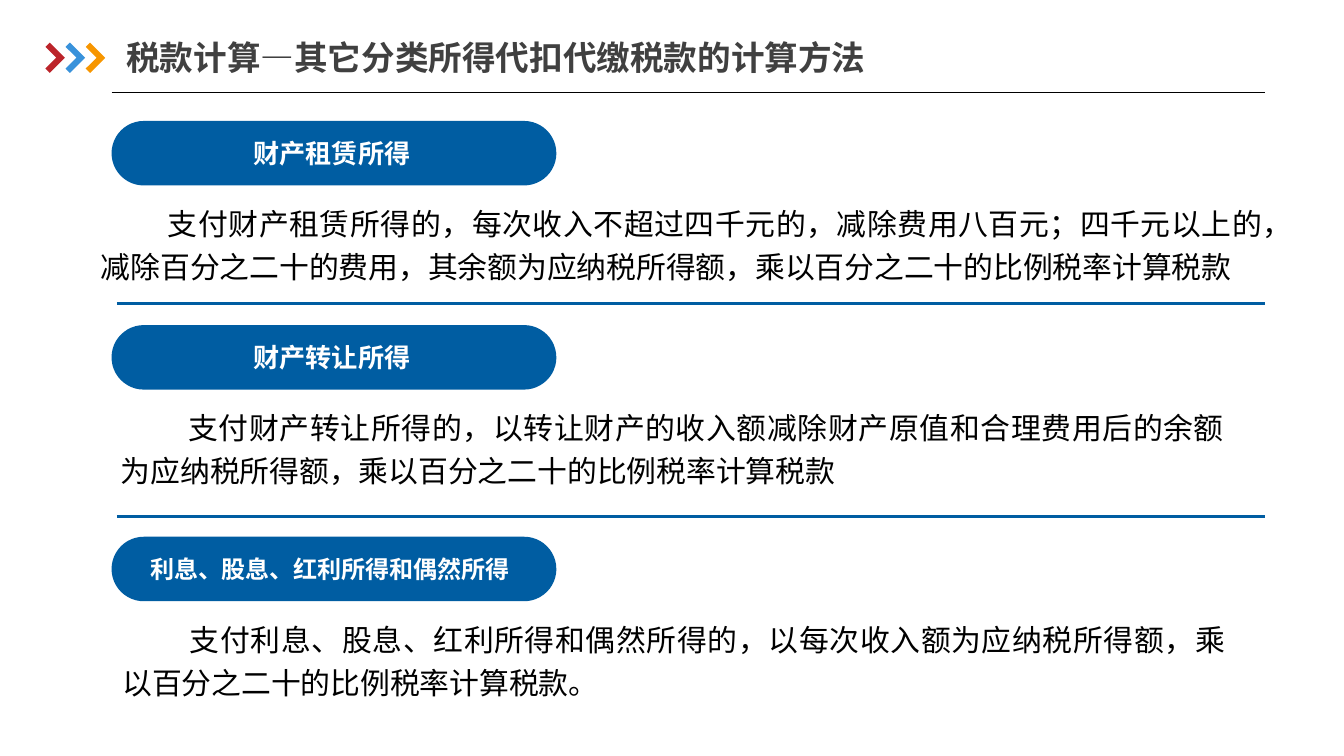
import pptx
import pptx.dml.color
import pptx.enum.shapes
import pptx.enum.text
import pptx.oxml.ns
import pptx.util
from lxml import etree

RGBColor = pptx.dml.color.RGBColor
Shape = pptx.enum.shapes.MSO_SHAPE
Align = pptx.enum.text.PP_ALIGN
Anchor = pptx.enum.text.MSO_ANCHOR
qn = pptx.oxml.ns.qn

BLACK = RGBColor(0, 0, 0)
WHITE = RGBColor(255, 255, 255)
GREY = RGBColor(0x40, 0x40, 0x40)
BLUE = RGBColor(0x00, 0x5D, 0xA2)
CHEVRON_COLOURS = [
    RGBColor(0xBC, 0x24, 0x2A),
    RGBColor(0x39, 0x92, 0xDB),
    RGBColor(0xF7, 0x96, 0x00),
]

HEADING_FONT = "Noto Sans CJK SC"
BODY_FONT = "Calibri"

# The slide is a grid of 100 columns by 100 rows.
WIDTH = pptx.util.Inches(10)
HEIGHT = pptx.util.Inches(5.625)
RIGHT_EDGE = 94.1
PILL_LEFT = 8.3

# Top row, label, label left and width, label size, body left, width and height, text
SECTIONS = [
    (16, "财产租赁所得", 14.6, 20.2, 14, 7.5, 86.6, 17.07,
     "支付财产租赁所得的，每次收入不超过四千元的，减除费用八百元；四千元以上的，"
     "减除百分之二十的费用，其余额为应纳税所得额，乘以百分之二十的比例税率计算税款"),
    (43, "财产转让所得", 14.6, 20.2, 14, 9, 82.2, 11.38,
     "支付财产转让所得的，以转让财产的收入额减除财产原值和合理费用后的余额"
     "为应纳税所得额，乘以百分之二十的比例税率计算税款"),
    (71, "利息、股息、红利所得和偶然所得", 10.1, 28.9, 12.9, 9.1, 82.2, 11.38,
     "支付利息、股息、红利所得和偶然所得的，以每次收入额为应纳税所得额，"
     "乘以百分之二十的比例税率计算税款。"),
]


def columns(count):
    return round(WIDTH * count / 100)


def rows(count):
    return round(HEIGHT * count / 100)


def area(left, top, width, height):
    return columns(left), rows(top), columns(width), rows(height)


def write(box, text, size, colour, font_name, bold=False, inset=0,
          anchor=Anchor.MIDDLE):
    """Fill the box with one paragraph and return that paragraph."""
    frame = box.text_frame
    frame.word_wrap = True
    frame.auto_size = pptx.enum.text.MSO_AUTO_SIZE.NONE
    frame.vertical_anchor = anchor
    frame.margin_left = frame.margin_right = 0
    frame.margin_top = frame.margin_bottom = pptx.util.Inches(inset)
    paragraph = frame.paragraphs[0]
    paragraph.text = text
    font = paragraph.font
    font.size = pptx.util.Pt(size)
    font.bold = bold
    font.name = font_name
    font.color.rgb = colour
    if font_name == HEADING_FONT:
        properties = paragraph._p.pPr.find(qn("a:defRPr"))
        etree.SubElement(properties, qn("a:ea"), typeface=font_name)
    return paragraph


def add_title(page, text):
    title = page.shapes.title
    title.left, title.top, title.width, title.height = area(9.4, 3.91, 83.1, 7.29)
    paragraph = write(title, text, 18, GREY, HEADING_FONT, bold=True, inset=0.05)
    paragraph.alignment = Align.LEFT


def add_solid(page, preset, place, colour, adjustments):
    shape = page.shapes.add_shape(preset, *place)
    shape.shadow.inherit = False
    shape.fill.solid()
    shape.fill.fore_color.rgb = colour
    shape.line.fill.background()
    for index, value in enumerate(adjustments):
        shape.adjustments[index] = value
    return shape


def add_chevrons(page):
    for index, colour in enumerate(CHEVRON_COLOURS):
        place = area(2.9 + 1.5 * index, 6.22, 1.6, 2.84)
        chevron = add_solid(page, Shape.CORNER, place, colour, [0.28, 0.29])
        chevron.rotation = 225


def add_rule(page, left, row, colour, weight):
    rule = page.shapes.add_connector(
        pptx.enum.shapes.MSO_CONNECTOR.STRAIGHT,
        columns(left), rows(row), columns(RIGHT_EDGE), rows(row))
    rule.line.color.rgb = colour
    rule.line.width = pptx.util.Pt(weight)
    etree.SubElement(rule._element.spPr, qn("a:effectLst"))


def add_section(page, top, label, label_left, label_width, label_size,
                body_left, body_width, body_height, text):
    add_solid(page, Shape.ROUNDED_RECTANGLE, area(PILL_LEFT, top, 33.1, 8.53),
              BLUE, [0.5])

    label_box = page.shapes.add_textbox(
        *area(label_left, top + 1.42, label_width, 6.04))
    paragraph = write(label_box, label, label_size, WHITE, HEADING_FONT, bold=True)
    paragraph.alignment = Align.CENTER
    paragraph.line_spacing = 0.9

    body_box = page.shapes.add_textbox(
        *area(body_left, top + 10.25, body_width, body_height))
    paragraph = write(body_box, text, 16, BLACK, BODY_FONT, anchor=Anchor.TOP)
    paragraph.alignment = Align.JUSTIFY
    paragraph.line_spacing = 1.2
    paragraph._p.pPr.set("indent", str(pptx.util.Inches(0.5)))


def main():
    deck = pptx.Presentation()
    deck.slide_width, deck.slide_height = WIDTH, HEIGHT
    page = deck.slides.add_slide(deck.slide_layouts.get_by_name("Title Only"))

    add_title(page, "税款计算—其它分类所得代扣代缴税款的计算方法")
    add_chevrons(page)
    add_rule(page, PILL_LEFT, 12.27, BLACK, 0.75)
    for section in SECTIONS:
        add_section(page, *section)
    for row in (40.18, 68.27):
        add_rule(page, 8.7, row, BLUE, 1.5)

    deck.save("out.pptx")


if __name__ == "__main__":
    main()
